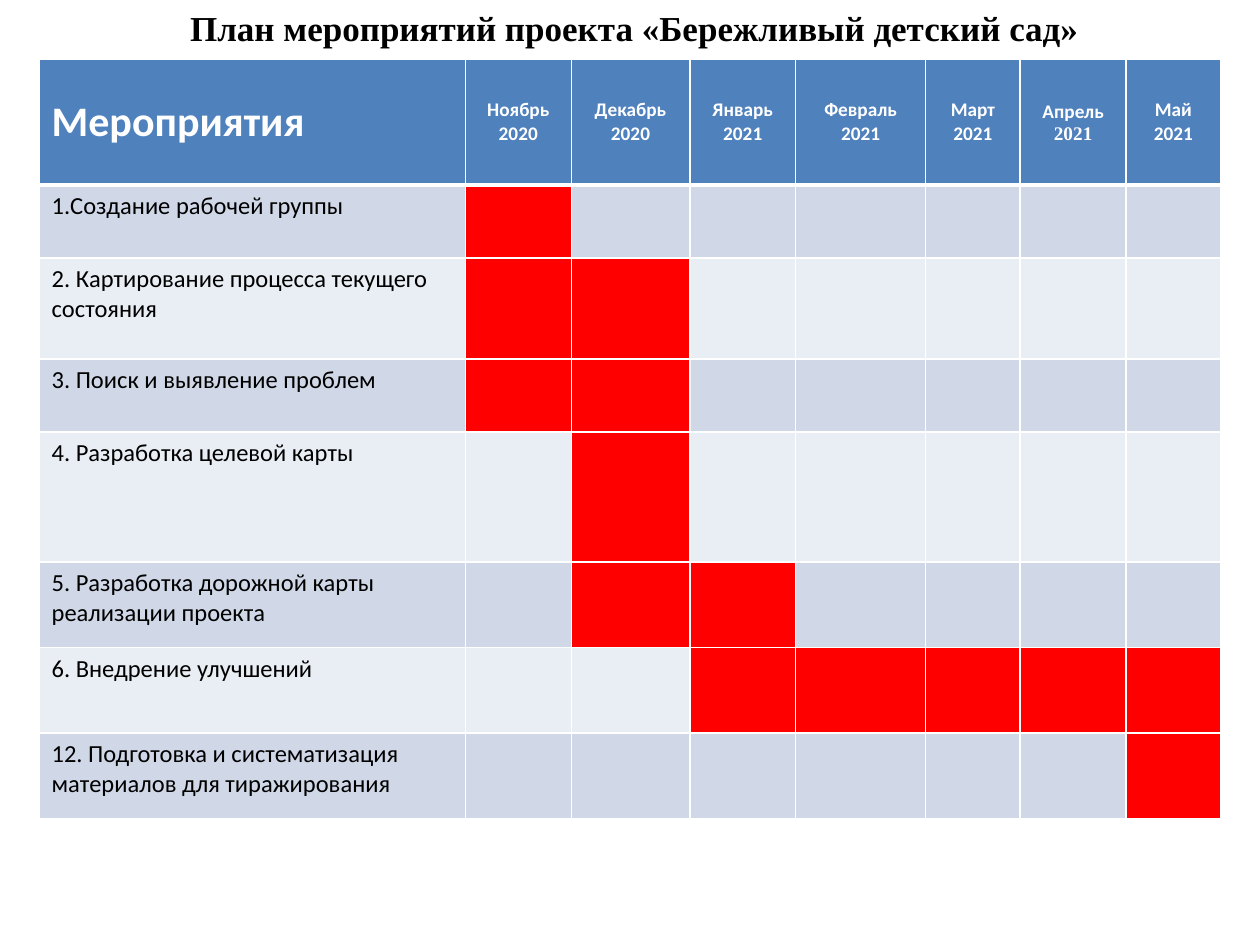
from lxml.etree import SubElement
from pptx import Presentation
from pptx.dml.color import RGBColor
from pptx.enum.text import MSO_ANCHOR, PP_ALIGN
from pptx.oxml.ns import qn
from pptx.util import Inches, Pt

COLORS = {
    "header": "4F81BD",
    "odd": "D0D8E8",
    "even": "E9EDF4",
    "active": "FF0000",
    "light": "FFFFFF",
    "dark": "000000",
}
SLIDE_WIDTH, SLIDE_HEIGHT = Inches(10), Inches(7.5)
TITLE = "План мероприятий проекта «Бережливый детский сад»"
MONTHS = ["Ноябрь 2020", "Декабрь 2020", "Январь 2021", "Февраль 2021",
          "Март 2021", "Апрель\n2021", "Май 2021"]
ACTIVITIES = [
    ("1.Создание рабочей группы", 1, 1),
    ("2. Картирование процесса текущего состояния", 1, 2),
    ("3. Поиск и выявление проблем", 1, 2),
    ("4. Разработка целевой карты", 2, 2),
    ("5. Разработка дорожной карты реализации проекта", 2, 3),
    ("6. Внедрение улучшений", 3, 7),
    ("12. Подготовка и систематизация\nматериалов для тиражирования", 7, 7),
]
COLUMN_WEIGHTS = [3.38, 0.84, 0.94, 0.84, 1.03, 0.75, 0.84, 0.75]
ROW_WEIGHTS = [1, 0.58, 0.8, 0.58, 1.03, 0.68, 0.68, 0.68]


def share_box(left, top, width, height):
    """Turn shares of the slide's size into a box of lengths."""
    return (int(left * SLIDE_WIDTH), int(top * SLIDE_HEIGHT),
            int(width * SLIDE_WIDTH), int(height * SLIDE_HEIGHT))


def style_font(paragraph, size, color, bold=False, name="Calibri"):
    """Set the font of a paragraph."""
    font = paragraph.font
    font.size, font.bold, font.name = Pt(size), bold, name
    font.color.rgb = RGBColor.from_string(COLORS[color])


def set_borders(cell, top=1, bottom=1):
    """Draw light borders of the given point widths around a cell."""
    properties = cell._tc.get_or_add_tcPr()
    for side, width in (("L", 1), ("R", 1), ("T", top), ("B", bottom)):
        line = SubElement(properties, qn(f"a:ln{side}"), w=str(Pt(width)))
        fill = SubElement(line, qn("a:solidFill"))
        SubElement(fill, qn("a:srgbClr"), val=COLORS["light"])


def fill_cell(cell, color):
    """Fill a cell with one colour."""
    cell.fill.solid()
    cell.fill.fore_color.rgb = RGBColor.from_string(COLORS[color])


def write_cell(cell, text, size, color, bold=False, align=PP_ALIGN.LEFT):
    """Write the text of a cell, one paragraph a line."""
    cell.text = text
    for paragraph in cell.text_frame.paragraphs:
        paragraph.alignment = align
        style_font(paragraph, size, color, bold)


def add_title(slide, box):
    """Place the heading in its box."""
    frame = slide.shapes.add_textbox(*box).text_frame
    frame.word_wrap = True
    heading = frame.paragraphs[0]
    heading.text = TITLE
    style_font(heading, 20, "dark", True, "Times New Roman")


def fill_header(table):
    """Write the heading row of the schedule."""
    for column, label in enumerate(["Мероприятия"] + MONTHS):
        cell = table.cell(0, column)
        set_borders(cell, bottom=3)
        fill_cell(cell, "header")
        cell.vertical_anchor = MSO_ANCHOR.MIDDLE
        size, align = (11, PP_ALIGN.CENTER) if column else (24, PP_ALIGN.LEFT)
        write_cell(cell, label, size, "light", True, align)
    april_year = table.cell(0, 6).text_frame.paragraphs[1]
    april_year.font.name = "Times New Roman"


def add_schedule(slide, box):
    """Place the schedule of activities by month in its box."""
    left, top, width, height = box
    table = slide.shapes.add_table(
        len(ROW_WEIGHTS), len(COLUMN_WEIGHTS), left, top, width, height).table
    for column, weight in zip(table.columns, COLUMN_WEIGHTS):
        column.width = int(width * weight / sum(COLUMN_WEIGHTS))
    for row, weight in zip(table.rows, ROW_WEIGHTS):
        row.height = int(height * weight / sum(ROW_WEIGHTS))
    fill_header(table)
    for row, (activity, first, last) in enumerate(ACTIVITIES, 1):
        band = "odd" if row % 2 else "even"
        for column in range(len(COLUMN_WEIGHTS)):
            cell = table.cell(row, column)
            set_borders(cell, top=3 if row == 1 else 1)
            fill_cell(cell, "active" if first <= column <= last else band)
        write_cell(table.cell(row, 0), activity, 14, "dark")


def main():
    """Build and save the presentation."""
    deck = Presentation()
    deck.slide_width, deck.slide_height = SLIDE_WIDTH, SLIDE_HEIGHT
    slide = deck.slides.add_slide(deck.slide_layouts[6])
    add_title(slide, share_box(0.141, 0, 0.758, 0.058))
    add_schedule(slide, share_box(0.031, 0.0625, 0.938, 0.804))
    deck.save("out.pptx")


if __name__ == "__main__":
    main()
